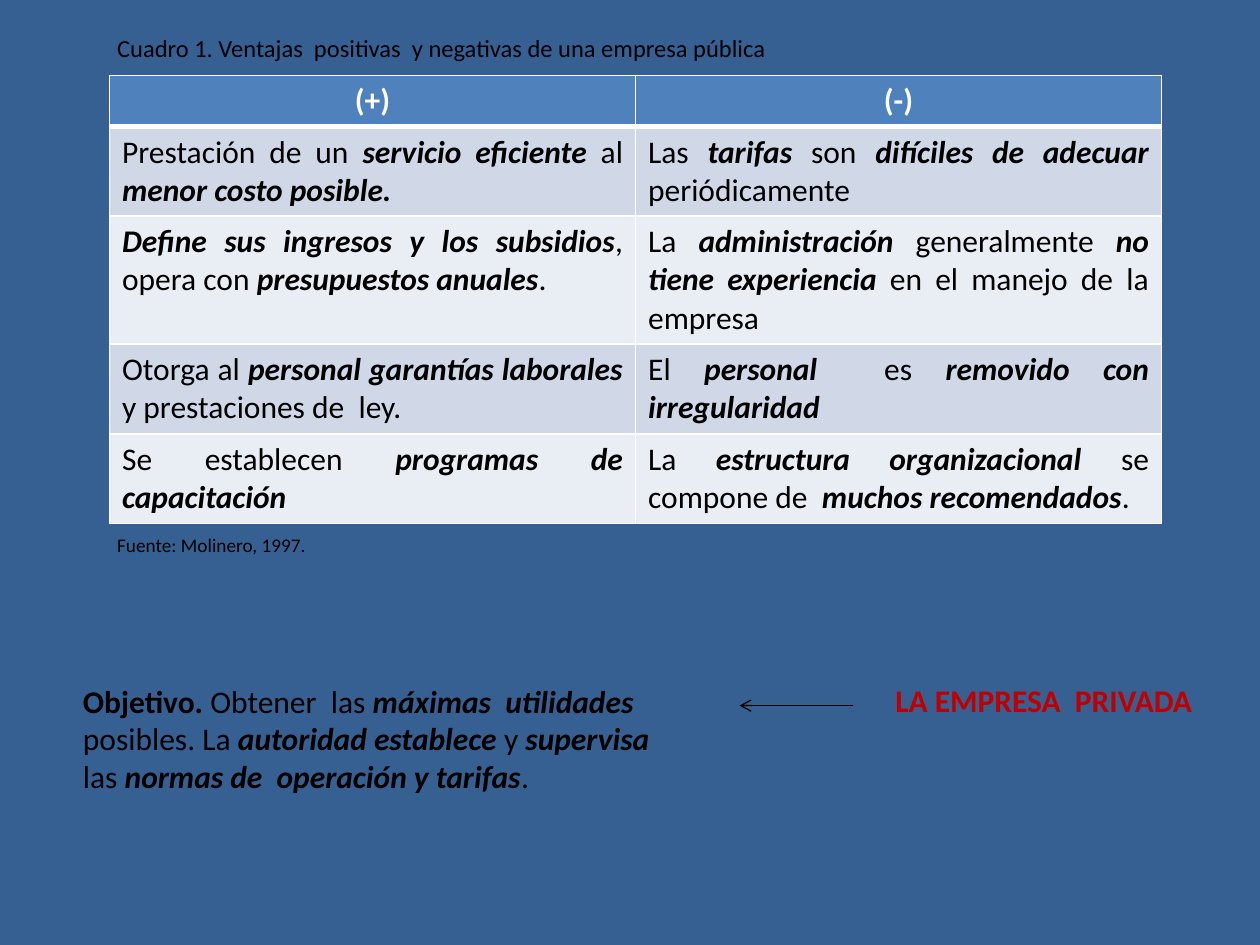
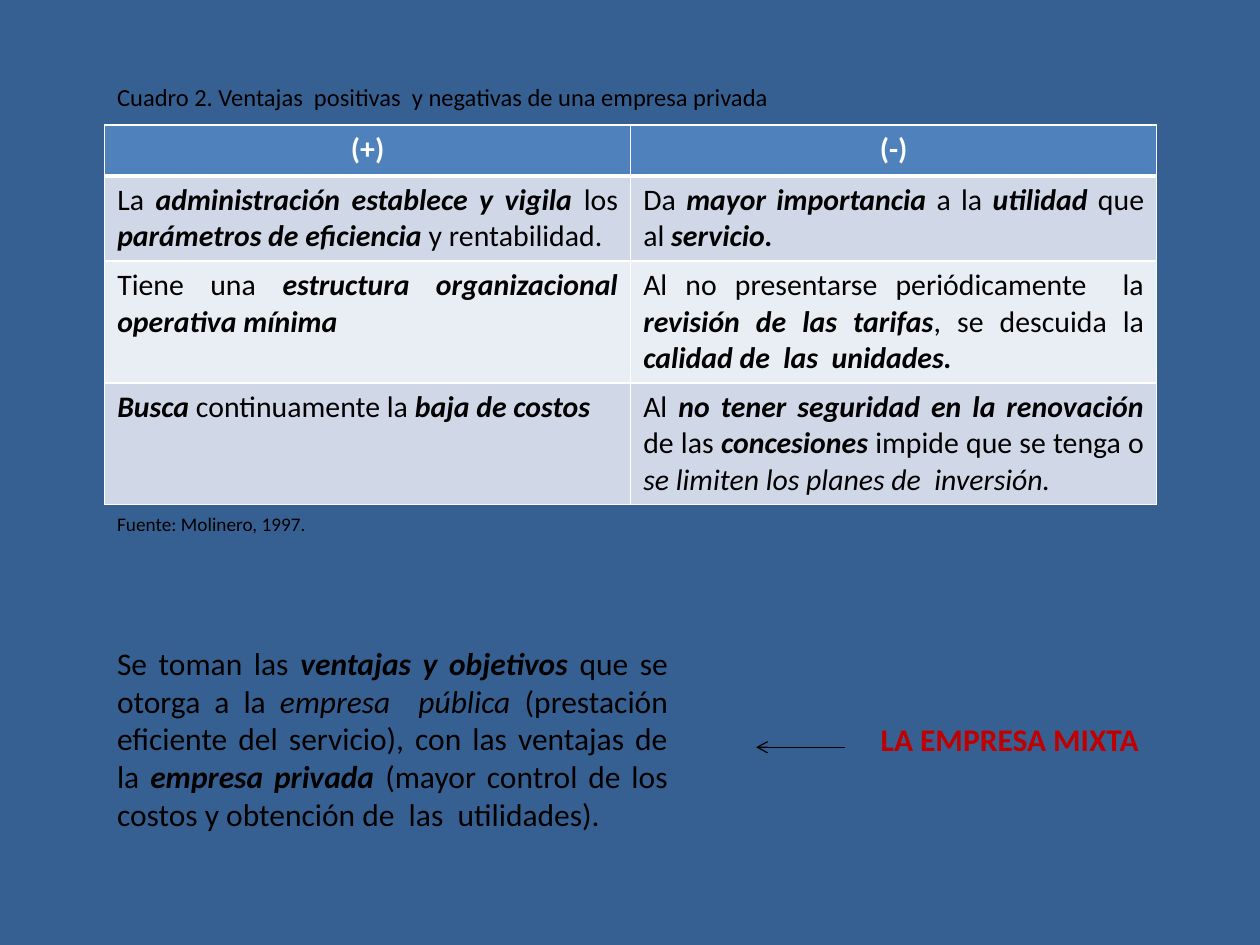
from dataclasses import dataclass

from lxml.etree import SubElement
from pptx import Presentation
from pptx.dml.color import RGBColor
from pptx.enum.shapes import MSO_CONNECTOR
from pptx.enum.text import MSO_AUTO_SIZE, PP_ALIGN
from pptx.oxml.ns import qn
from pptx.util import Pt

# Shared look
FONT = "Calibri"
BACK = RGBColor(0x37, 0x60, 0x92)
HEAD = RGBColor(0x4F, 0x81, 0xBD)
BANDS = (RGBColor(0xD0, 0xD8, 0xE8), RGBColor(0xE9, 0xED, 0xF4))
WHITE = RGBColor(0xFF, 0xFF, 0xFF)
BLACK = RGBColor(0, 0, 0)
RED = RGBColor(0xC0, 0, 0)

COL_WIDTH = 300.6
ROW_HEIGHT = 29.2
SIGNS = ("(+)", "(-)")
SOURCE = "Fuente: Molinero, 1997."

# Marks that switch a style on and off: mark -> (bold, italic)
MARKS = {"*": (True, True), "#": (True, False), "_": (False, True)}


@dataclass
class Box:
    text: str
    left: float
    top: float
    width: float
    height: float
    size: float = 18
    color: RGBColor = BLACK
    align: PP_ALIGN = PP_ALIGN.LEFT


@dataclass
class Grid:
    left: float
    top: float
    size: float
    rows: list[tuple[str, str]]


@dataclass
class Arrow:
    start: float
    end: float
    y: float


@dataclass
class Page:
    grid: Grid
    boxes: list[Box]
    arrow: Arrow


def caption(text: str, top: float) -> Box:
    return Box(text, 59.8, top, 459.4, 24.5, size=14)


def source(top: float) -> Box:
    return Box(SOURCE, 59.8, top, 272.2, 20.9, size=11)


def heading(text: str, left: float, top: float, width: float) -> Box:
    return Box(text, left, top, width, 28.8, color=RED, align=PP_ALIGN.CENTER)


PAGES = [
    Page(
        Grid(62.6, 43.2, 18, [
            ("Prestación de un *servicio eficiente *al *menor costo posible.*",
             "Las *tarifas* son *difíciles de adecuar *periódicamente"),
            ("*Define sus ingresos y los subsidios*, opera con "
             "*presupuestos anuales*.",
             "La *administración* generalmente *no tiene experiencia* "
             "en el manejo de la empresa"),
            ("Otorga al *personal garantías laborales* y prestaciones de  ley.",
             "El *personal*  es *removido con irregularidad*"),
            ("Se establecen *programas de capacitación*",
             "La *estructura organizacional *se compone de  "
             "*muchos recomendados*."),
        ]),
        [
            heading("#LA EMPRESA  PRIVADA#", 494.6, 385.9, 203.8),
            Box("#Objetivo. #Obtener  las *máximas  utilidades *posibles. La "
                "*autoridad establece *y* supervisa *las "
                "*normas de  operación y tarifas*.",
                40.3, 385.9, 353.5, 72.7),
            caption("Cuadro 1. Ventajas  positivas  y negativas "
                    "de una empresa pública", 15.1),
            source(301),
        ],
        Arrow(487.4, 422.6, 403.2),
    ),
    Page(
        Grid(59.8, 71.3, 17, [
            ("La *administración establece y vigila *los "
             "*parámetros de eficiencia *y rentabilidad.",
             "Da *mayor importancia* a la *utilidad* que al *servicio.*"),
            ("Tiene una *estructura organizacional operativa mínima*",
             "Al no presentarse periódicamente  la *revisión de las tarifas*, "
             "se descuida la *calidad de  las  unidades.*"),
            ("*Busca* continuamente la *baja de costos*",
             "Al *no tener seguridad en la renovación *de las *concesiones* "
             "impide que se tenga o _se limiten los planes de  inversión._"),
        ]),
        [
            heading("#LA EMPRESA MIXTA#", 469.4, 408.2, 215.3),
            Box("Se toman las *ventajas y objetivos *que se otorga a la "
                "_empresa  pública _(prestación eficiente del servicio), con "
                "las ventajas de la *empresa privada *(mayor control de los "
                "costos y obtención de  las  utilidades).",
                59.8, 364.3, 329, 116.6, align=PP_ALIGN.JUSTIFY),
            caption("Cuadro 2. Ventajas  positivas  y negativas "
                    "de una empresa privada", 43.2),
            source(289.4),
        ],
        Arrow(483.1, 432, 427),
    ),
]


def pieces(text: str) -> list[tuple[str, str]]:
    """Split marked text into (mark, words) pairs."""
    parts, mark, words = [], "", ""
    for char in text:
        if char in MARKS:
            if words:
                parts.append((mark, words))
            mark, words = ("" if mark else char), ""
        else:
            words += char
    return parts + [(mark, words)] if words else parts


def write(frame, text: str, size: float, color: RGBColor,
          align: PP_ALIGN) -> None:
    para = frame.paragraphs[0]
    para.alignment = align
    para.font.name = FONT
    para.font.size = Pt(size)
    para.font.color.rgb = color
    for mark, words in pieces(text):
        run = para.add_run()
        run.text = words
        run.font.bold, run.font.italic = MARKS.get(mark, (False, False))


def border(cell, top: float, bottom: float) -> None:
    props = cell._tc.get_or_add_tcPr()
    for side, width in (("L", 1), ("R", 1), ("T", top), ("B", bottom)):
        line = SubElement(props, qn(f"a:ln{side}"), w=str(Pt(width)))
        fill = SubElement(line, qn("a:solidFill"))
        SubElement(fill, qn("a:srgbClr"), val=str(WHITE))


def add_grid(slide, grid: Grid) -> None:
    rows = [tuple(f"#{sign}#" for sign in SIGNS)] + grid.rows
    table = slide.shapes.add_table(
        len(rows), len(SIGNS), Pt(grid.left), Pt(grid.top),
        Pt(COL_WIDTH * len(SIGNS)), Pt(ROW_HEIGHT * len(rows))).table
    for col in table.columns:
        col.width = Pt(COL_WIDTH)
    for i, row in enumerate(rows):
        table.rows[i].height = Pt(ROW_HEIGHT)
        for j, text in enumerate(row):
            cell = table.cell(i, j)
            border(cell, 3 if i == 1 else 1, 3 if i == 0 else 1)
            cell.fill.solid()
            cell.fill.fore_color.rgb = BANDS[(i - 1) % 2] if i else HEAD
            write(cell.text_frame, text, grid.size, BLACK if i else WHITE,
                  PP_ALIGN.JUSTIFY if i else PP_ALIGN.CENTER)


def add_box(slide, box: Box) -> None:
    shape = slide.shapes.add_textbox(
        Pt(box.left), Pt(box.top), Pt(box.width), Pt(box.height))
    frame = shape.text_frame
    frame.word_wrap = True
    frame.auto_size = MSO_AUTO_SIZE.SHAPE_TO_FIT_TEXT
    write(frame, box.text, box.size, box.color, box.align)


def add_arrow(slide, arrow: Arrow) -> None:
    link = slide.shapes.add_connector(
        MSO_CONNECTOR.STRAIGHT, Pt(arrow.start), Pt(arrow.y),
        Pt(arrow.end), Pt(arrow.y))
    link.line.color.rgb = BLACK
    link.line.width = Pt(0.75)
    SubElement(link.line._get_or_add_ln(), qn("a:tailEnd"), type="arrow")
    SubElement(link._element.spPr, qn("a:effectLst"))


def main() -> None:
    deck = Presentation()
    deck.slide_width, deck.slide_height = Pt(720), Pt(540)
    blank = deck.slide_layouts[6]
    # The background is set once, on the master
    back = deck.slide_master.background.fill
    back.solid()
    back.fore_color.rgb = BACK
    for page in PAGES:
        slide = deck.slides.add_slide(blank)
        add_grid(slide, page.grid)
        for box in page.boxes:
            add_box(slide, box)
        add_arrow(slide, page.arrow)
    deck.save("out.pptx")


if __name__ == "__main__":
    main()
